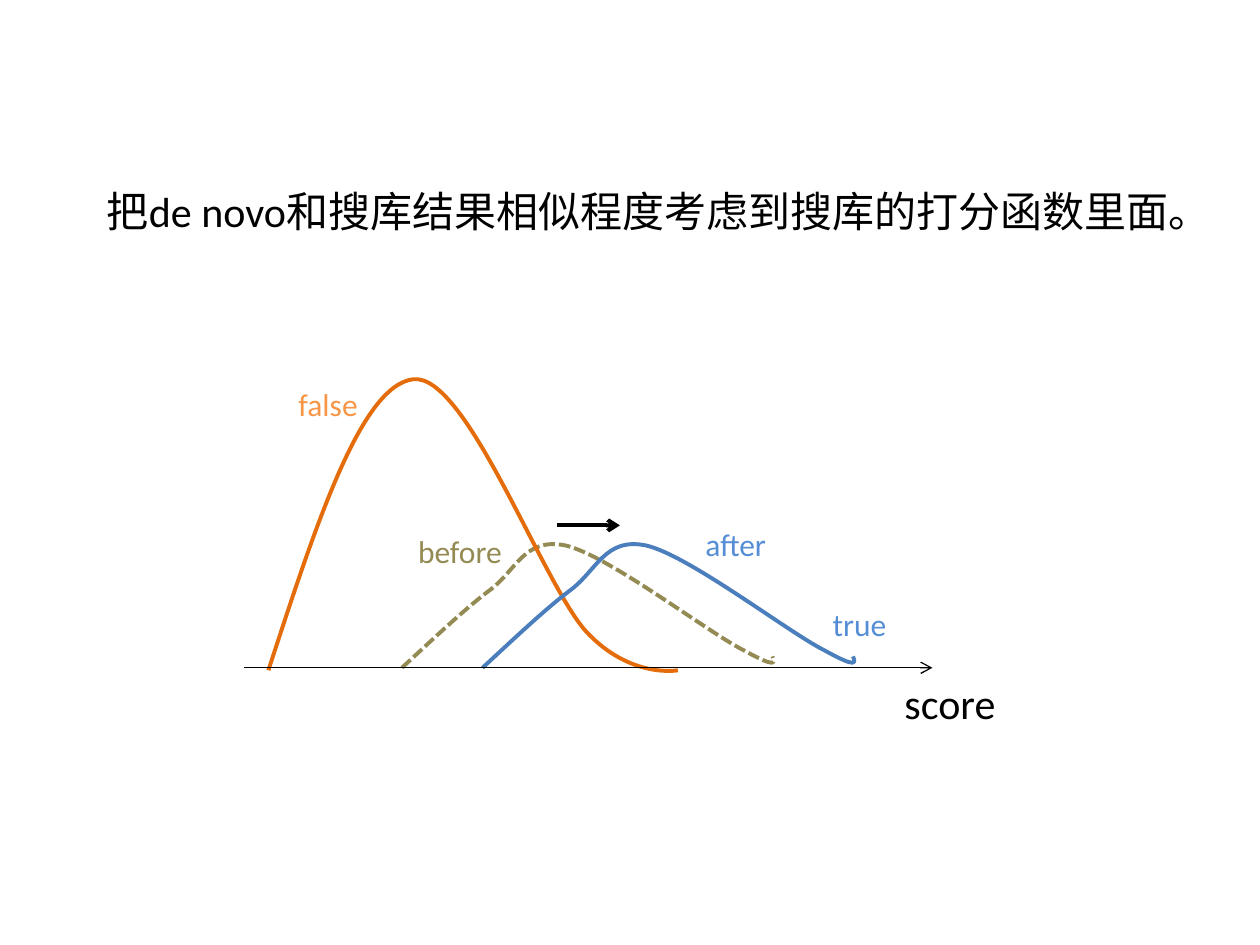
from typing import NamedTuple, Optional
from lxml.etree import SubElement
from pptx import Presentation
from pptx.dml.color import RGBColor as RGB
from pptx.enum.dml import MSO_LINE_DASH_STYLE as Dash
from pptx.enum.shapes import MSO_CONNECTOR as Conn
from pptx.enum.text import MSO_AUTO_SIZE as Fit
from pptx.oxml.ns import qn
from pptx.util import Emu, Inches, Pt

COLS, ROWS = 100, 75
CELL = Inches(0.1)
FONT = "Calibri"
HUES = {
    "ink": "000000",
    "false": "E46C0A",
    "false text": "F79646",
    "before": "948A54",
    "after": "4B7EBC",
    "true text": "558ED5",
}


class Curve(NamedTuple):
    points: list  # start, then two controls and an end for each span
    hue: str
    shift: float = 0
    dash: Optional[Dash] = None


class Arrow(NamedTuple):
    left: float
    right: float
    row: float
    weight: float


class Label(NamedTuple):
    text: str
    col: float
    row: float
    width: float
    height: float
    hue: str
    size: int = 18
    wrap: bool = False


def grid(n: float) -> Emu:
    return Emu(round(n * CELL))


def draw_curve(shapes, curve: Curve) -> None:
    pts = [(grid(x + curve.shift), grid(y)) for x, y in curve.points]
    knots = pts[::3]
    pen = shapes.build_freeform(*knots[0])
    pen.add_line_segments(knots[1:], close=False)
    shape = pen.convert_to_shape()
    # Turn each straight piece into a Bézier span
    for i, piece in enumerate(list(shape._element.iter(qn("a:lnTo")))):
        span = SubElement(piece.getparent(), qn("a:cubicBezTo"))
        for x, y in pts[3 * i + 1:3 * i + 4]:
            SubElement(span, qn("a:pt"),
                       x=str(x - shape.left), y=str(y - shape.top))
        piece.getparent().remove(piece)
    shape.shadow.inherit = False
    shape.fill.background()
    shape.line.color.rgb = RGB.from_string(HUES[curve.hue])
    shape.line.width = Pt(2.25)
    if curve.dash:
        shape.line.dash_style = curve.dash


def draw_arrow(shapes, arrow: Arrow) -> None:
    y = grid(arrow.row)
    line = shapes.add_connector(
        Conn.STRAIGHT, grid(arrow.left), y, grid(arrow.right), y)
    line.line.color.rgb = RGB.from_string(HUES["ink"])
    line.line.width = Pt(arrow.weight)
    SubElement(line.line._get_or_add_ln(), qn("a:tailEnd"), type="arrow")
    SubElement(line._element.spPr, qn("a:effectLst"))


def draw_label(shapes, label: Label) -> None:
    box = shapes.add_textbox(*map(
        grid, (label.col, label.row, label.width, label.height)))
    frame = box.text_frame
    frame.word_wrap = label.wrap
    frame.auto_size = Fit.SHAPE_TO_FIT_TEXT
    frame.text = label.text
    font = frame.paragraphs[0].runs[0].font
    font.name, font.size = FONT, Pt(label.size)
    font.color.rgb = RGB.from_string(HUES[label.hue])


# Score distributions, in grid cells
FALSE = [
    (21.3, 53.2),
    (25, 41.9), (28.6, 30.6), (32.8, 30.1),
    (37, 29.6), (43, 46.2), (46.5, 50.1),
    (50, 53.9), (53.8, 53.2), (53.8, 53.2),
]
TRUE = [
    (38.3, 53),
    (40.7, 50.8), (43.1, 48.5), (45.2, 46.9),
    (47.4, 45.3), (48, 42.6), (51.3, 43.3),
    (54.7, 44.1), (62.6, 50.2), (65.4, 51.6),
    (68.1, 53.1), (67.9, 52.6), (67.7, 52.1),
]
CURVES = [
    Curve(TRUE, "before", -6.4, Dash.SQUARE_DOT),
    Curve(FALSE, "false"),
    Curve(TRUE, "after"),
]

# Score axis, then the move from before to after
ARROWS = [Arrow(19.4, 74, 53, 0.75), Arrow(44.2, 49.2, 41.7, 2.25)]

LABELS = [
    Label("score", 70.8, 53.3, 10.7, 5, "ink", 24, True),
    Label("false", 22.7, 30.1, 6.8, 4, "false text"),
    Label("true", 65.1, 47.5, 6.3, 4, "true text"),
    Label("before", 32.2, 41.7, 8.7, 4, "before"),
    Label("after", 55, 41.2, 6.9, 4, "true text"),
    Label("把de novo和搜库结果相似程度考虑到搜库的打分函数里面。",
          7.5, 14.2, 88.3, 9.1, "ink", 24, True),
]


def main() -> None:
    deck = Presentation()
    deck.slide_width, deck.slide_height = grid(COLS), grid(ROWS)
    shapes = deck.slides.add_slide(deck.slide_layouts[6]).shapes
    for curve in CURVES:
        draw_curve(shapes, curve)
    for arrow in ARROWS:
        draw_arrow(shapes, arrow)
    for label in LABELS:
        draw_label(shapes, label)
    deck.save("out.pptx")


if __name__ == "__main__":
    main()
